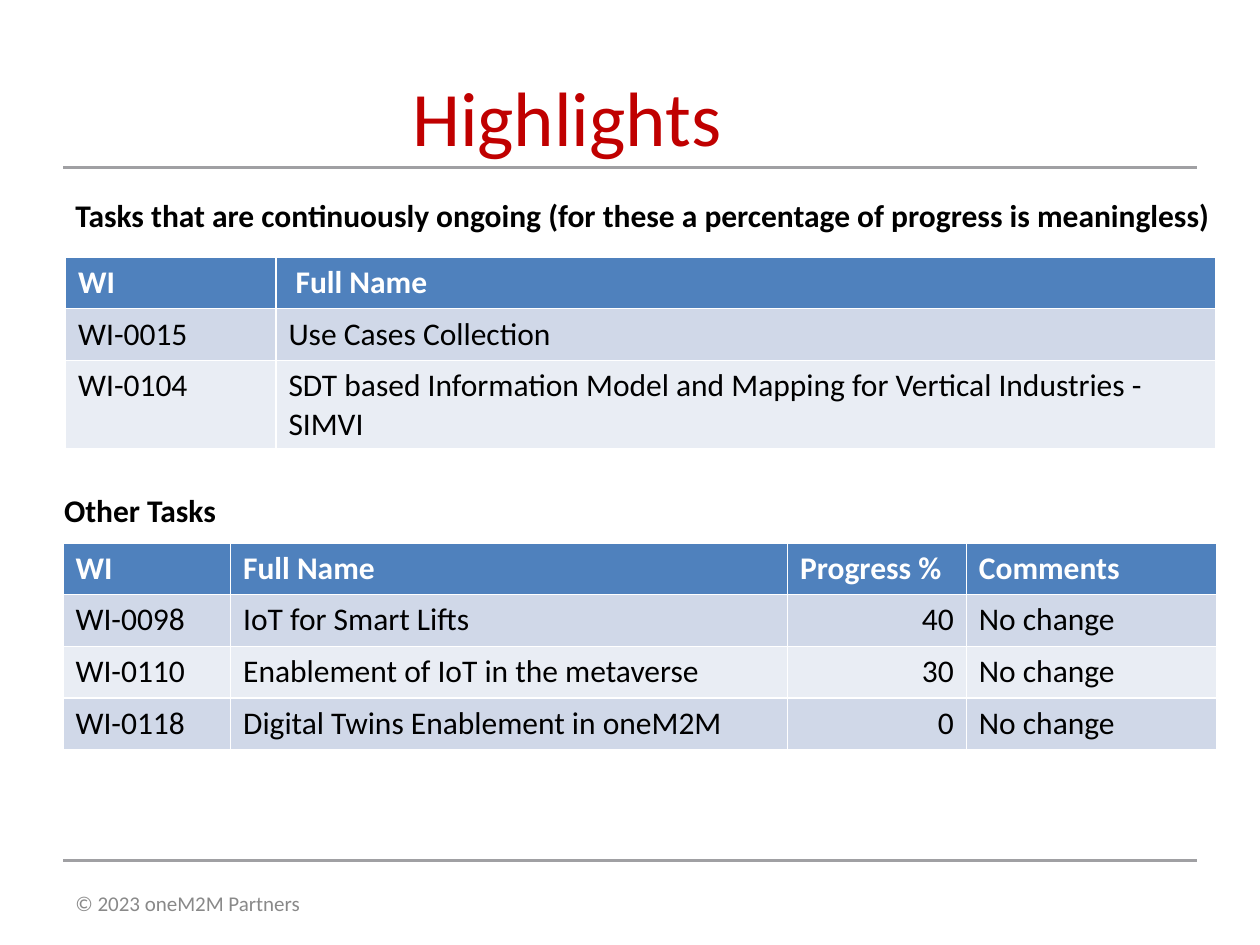
from lxml.etree import SubElement
from pptx import Presentation
from pptx.dml.color import RGBColor
from pptx.enum.shapes import MSO_CONNECTOR
from pptx.enum.text import MSO_ANCHOR, MSO_AUTO_SIZE, PP_ALIGN
from pptx.oxml.ns import qn
from pptx.util import Inches, Pt

FONT = "Calibri"
COLORS = {
    "title": "C00000", "text": "000000", "footer": "898989", "rule": "A0A0A3",
    "header": "4F81BD", "header_text": "FFFFFF", "odd": "D0D8E8", "even": "E9EDF4",
}

TITLE = "Highlights"
FOOTER = "© 2023 oneM2M Partners"
RULES_Y = [1.33, 6.83]
ROW_HEIGHT = 0.41

# Caption text, left, top, width
CAPTIONS = [
    ("Tasks that are continuously ongoing (for these a percentage of progress is meaningless)",
     0.5, 1.51, 9.27),
    ("Other Tasks", 0.41, 3.85, 1.42),
]
TABLES = [
    {"left": 0.52, "top": 2.04, "cols": [1.67, 7.46], "rows": [
        ("WI", " Full Name"),
        ("WI-0015", "Use Cases Collection"),
        ("WI-0104", "SDT based Information Model and Mapping for Vertical Industries - SIMVI"),
    ]},
    {"left": 0.5, "top": 4.31, "cols": [1.33, 4.42, 1.42, 1.99], "rows": [
        ("WI", "Full Name", "Progress %", "Comments"),
        ("WI-0098", "IoT for Smart Lifts", "40", "No change"),
        ("WI-0110", "Enablement of IoT in the metaverse", "30", "No change"),
        ("WI-0118", "Digital Twins Enablement in oneM2M", "0", "No change"),
    ]},
]


def rgb(name):
    return RGBColor.from_string(COLORS[name])


def set_text(tf, text, size, color, bold=False, align=PP_ALIGN.LEFT):
    tf.text = text
    p = tf.paragraphs[0]
    p.alignment = align
    font = p.runs[0].font
    font.name, font.size, font.bold = FONT, Pt(size), bold
    font.color.rgb = rgb(color)


def add_rule(s, y):
    line = s.shapes.add_connector(
        MSO_CONNECTOR.STRAIGHT, Inches(0.5), Inches(y), Inches(9.5), Inches(y))
    line.line.color.rgb = rgb("rule")
    line.line.width = Pt(1.75)
    SubElement(line._element.spPr, qn("a:effectLst"))


def add_text(s, text, left, top, width, height, size, color, bold=False):
    sp = s.shapes.add_textbox(Inches(left), Inches(top), Inches(width), Inches(height))
    set_text(sp.text_frame, text, size, color, bold)
    return sp.text_frame


def add_table(s, left, top, cols, rows):
    frame = s.shapes.add_table(
        len(rows), len(cols), Inches(left), Inches(top),
        Inches(sum(cols)), Inches(ROW_HEIGHT * len(rows)))
    table = frame.table
    for col, width in zip(table.columns, cols):
        col.width = Inches(width)
    for i, row in enumerate(rows):
        header = i == 0
        fill = "header" if header else "odd" if i % 2 else "even"
        for j, text in enumerate(row):
            cell = table.cell(i, j)
            cell.fill.solid()
            cell.fill.fore_color.rgb = rgb(fill)
            align = PP_ALIGN.RIGHT if text.isdigit() else PP_ALIGN.LEFT
            set_text(cell.text_frame, text, 18,
                     "header_text" if header else "text", header, align)


def main():
    prs = Presentation()
    prs.slide_width, prs.slide_height = Inches(10), Inches(7.5)
    s = prs.slides.add_slide(prs.slide_layouts[5])

    # Title
    title = s.shapes.title
    title.left, title.top = Inches(0), Inches(0.5)
    title.width, title.height = Inches(9), Inches(1.25)
    set_text(title.text_frame, TITLE, 44, "title", align=PP_ALIGN.CENTER)
    title.text_frame.vertical_anchor = MSO_ANCHOR.TOP

    # Rules above and below the content
    for y in RULES_Y:
        add_rule(s, y)

    # Captions and tables
    for text, left, top, width in CAPTIONS:
        tf = add_text(s, text, left, top, width, 0.4, 18, "text", bold=True)
        tf.word_wrap = False
        tf.auto_size = MSO_AUTO_SIZE.SHAPE_TO_FIT_TEXT
    for table in TABLES:
        add_table(s, **table)

    # Footer
    tf = add_text(s, FOOTER, 0.5, 6.83, 9, 0.67, 12, "footer")
    tf.word_wrap = True
    tf.vertical_anchor = MSO_ANCHOR.MIDDLE

    prs.save("out.pptx")


if __name__ == "__main__":
    main()
